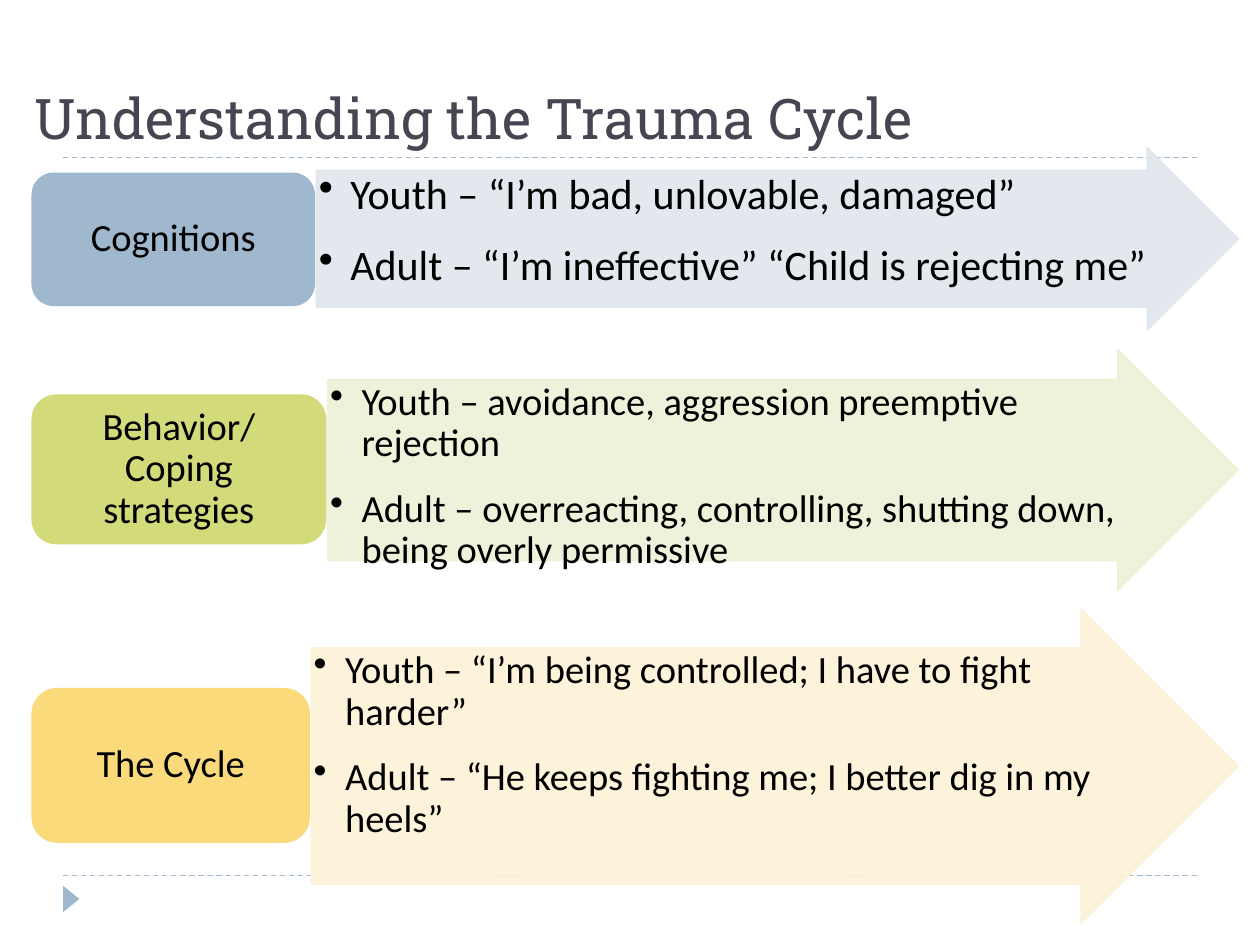
import pptx
import pptx.util
import pptx.dml.color
import pptx.enum.dml
import pptx.enum.shapes
import pptx.enum.text
import pptx.oxml
import pptx.oxml.ns
from lxml import etree

Inches = pptx.util.Inches
Pt = pptx.util.Pt
Shapes = pptx.enum.shapes.MSO_SHAPE
Align = pptx.enum.text.PP_ALIGN
Anchor = pptx.enum.text.MSO_ANCHOR

COLORS = {
    "title": "464653", "text": "000000", "blue": "9FB8CD", "green": "D2DA7A",
    "yellow": "FADA7A", "pale blue": "DFE6ED", "pale green": "EEF1D7",
    "pale yellow": "FDF1D7",
}
LABEL_LEFT, ARROW_RIGHT, GAP = 0.25, 9.83, 0.01

# label, colour, label (top, width, height), arrow (top, height), bullet size, bullets
ROWS = [
    ("Cognitions", "blue", (1.37, 2.25, 1.06), (1.17, 1.45), 24,
     ["Youth – “I’m bad, unlovable, damaged”",
      "Adult – “I’m ineffective” “Child is rejecting me”"]),
    ("Behavior/ Coping strategies", "green", (3.13, 2.34, 1.19), (2.77, 1.92), 22,
     ["Youth – avoidance, aggression preemptive rejection",
      "Adult – overreacting, controlling, shutting down, being overly permissive"]),
    ("The Cycle", "yellow", (5.46, 2.21, 1.23), (4.83, 2.5), 22,
     ["Youth – “I’m being controlled; I have to fight harder”",
      "Adult – “He keeps fighting me; I better dig in my heels”"]),
]


def color(name):
    return pptx.dml.color.RGBColor.from_string(COLORS[name])


def set_font(para, name, size, color_name):
    para.font.name = name
    para.font.size = Pt(size)
    para.font.color.rgb = color(color_name)


def set_frame(frame, anchor, side, end):
    frame.word_wrap = True
    frame.vertical_anchor = anchor
    frame.margin_left = frame.margin_right = Inches(side)
    frame.margin_top = frame.margin_bottom = Inches(end)


def add_filled(page, kind, left, top, width, height, fill):
    shape = page.shapes.add_shape(
        kind, Inches(left), Inches(top), Inches(width), Inches(height))
    shape.shadow.inherit = False
    shape.fill.solid()
    shape.fill.fore_color.rgb = color(fill)
    shape.line.fill.background()
    return shape


def add_rule(page, y):
    rule = page.shapes.add_connector(
        pptx.enum.shapes.MSO_CONNECTOR.STRAIGHT,
        Inches(0.5), Inches(y), Inches(9.5), Inches(y))
    rule.line.color.rgb = color("blue")
    rule.line.width = Pt(0.75)
    rule.line.dash_style = pptx.enum.dml.MSO_LINE.DASH
    etree.SubElement(rule.element.spPr, pptx.oxml.ns.qn("a:effectLst"))


def make_translucent(shape, percent):
    for tint in shape.element.spPr.iter(pptx.oxml.ns.qn("a:srgbClr")):
        alpha = etree.SubElement(tint, pptx.oxml.ns.qn("a:alpha"))
        alpha.set("val", str(percent * 1000))


def add_bullet(para):
    props = para._p.get_or_add_pPr()
    props.set("marL", str(Inches(0.25)))
    props.set("indent", str(-Inches(0.25)))
    bullet = etree.SubElement(props, pptx.oxml.ns.qn("a:buChar"))
    bullet.set("char", "•")


def add_arrow(page, left, top, height, fill, size, bullets):
    arrow = add_filled(page, Shapes.RIGHT_ARROW, left, top,
                       ARROW_RIGHT - left, height, fill)
    arrow.adjustments[0] = 0.75
    arrow.adjustments[1] = 0.5
    arrow.line.color.rgb = color(fill)
    arrow.line.width = Pt(0.75)
    make_translucent(arrow, 90)
    frame = arrow.text_frame
    set_frame(frame, Anchor.TOP, 0.02, 0.02)
    frame.text = "\n".join(bullets)
    for para in frame.paragraphs:
        para.alignment = Align.LEFT
        para.line_spacing = 0.9
        para.space_after = Pt(size * 0.62)
        add_bullet(para)
        set_font(para, "Calibri", size, "text")


def add_label(page, text, top, width, height, fill):
    label = add_filled(page, Shapes.ROUNDED_RECTANGLE, LABEL_LEFT, top,
                       width, height, fill)
    set_frame(label.text_frame, Anchor.MIDDLE, 0.09, 0.05)
    para = label.text_frame.paragraphs[0]
    para.text = text
    para.alignment = Align.CENTER
    para.line_spacing = 0.9
    set_font(para, "Calibri", 22, "text")


def set_title(page, text):
    title = page.shapes.title
    title.left, title.top = Inches(0.17), Inches(0)
    title.width, title.height = Inches(9.75), Inches(1.25)
    set_frame(title.text_frame, Anchor.BOTTOM, 0.1, 0.05)
    para = title.text_frame.paragraphs[0]
    para.text = text
    para.alignment = Align.LEFT
    set_font(para, "Roboto Slab", 32, "title")


def main():
    deck = pptx.Presentation()
    deck.slide_width, deck.slide_height = Inches(10), Inches(7.5)
    page = deck.slides.add_slide(deck.slide_layouts[5])

    # Title and page frame
    set_title(page, "Understanding the Trauma Cycle")
    for y in (6.95, 1.25):
        add_rule(page, y)
    marker = add_filled(page, Shapes.ISOSCELES_TRIANGLE, 0.46, 7.07, 0.21, 0.13, "blue")
    marker.rotation = 90

    # Each row: a pale arrow with bullets beside its label
    for text, fill, (top, width, height), (arrow_top, arrow_height), size, bullets in ROWS:
        add_arrow(page, LABEL_LEFT + width + GAP, arrow_top, arrow_height,
                  "pale " + fill, size, bullets)
        add_label(page, text, top, width, height, fill)

    deck.save("out.pptx")


if __name__ == "__main__":
    main()
